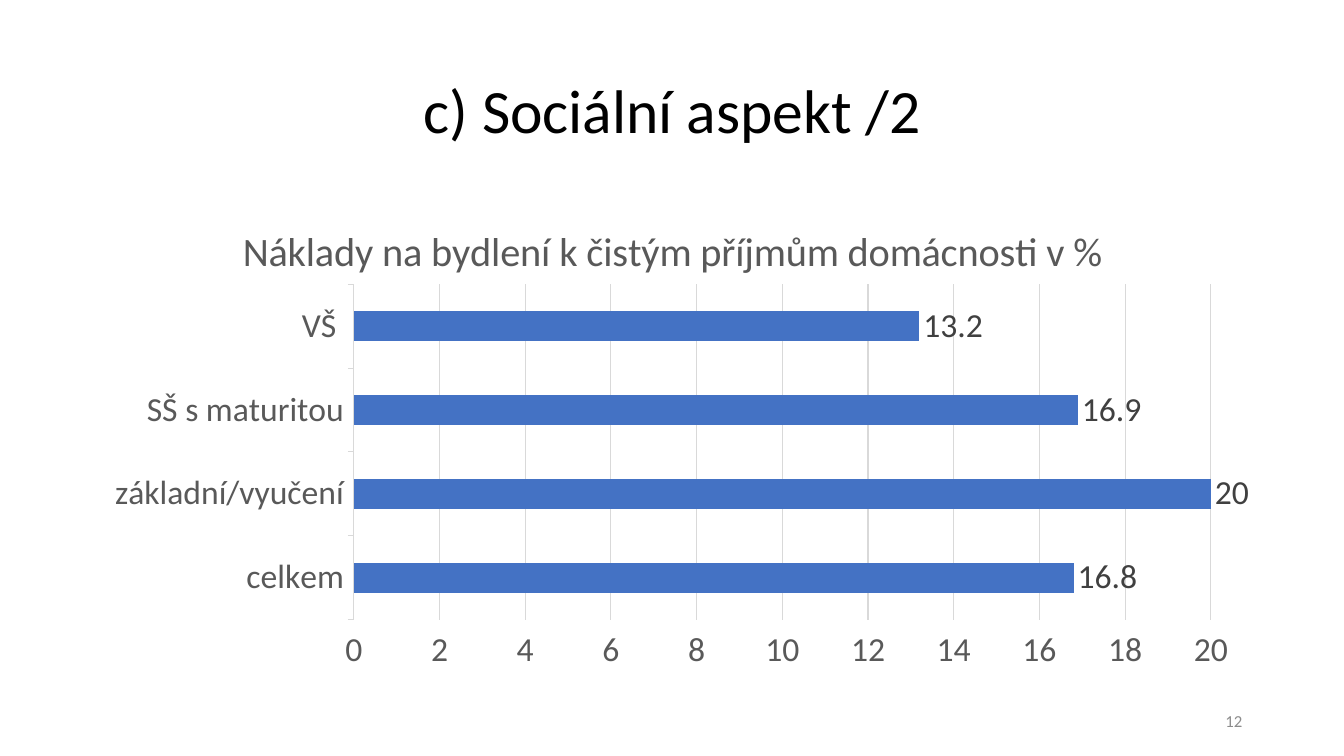
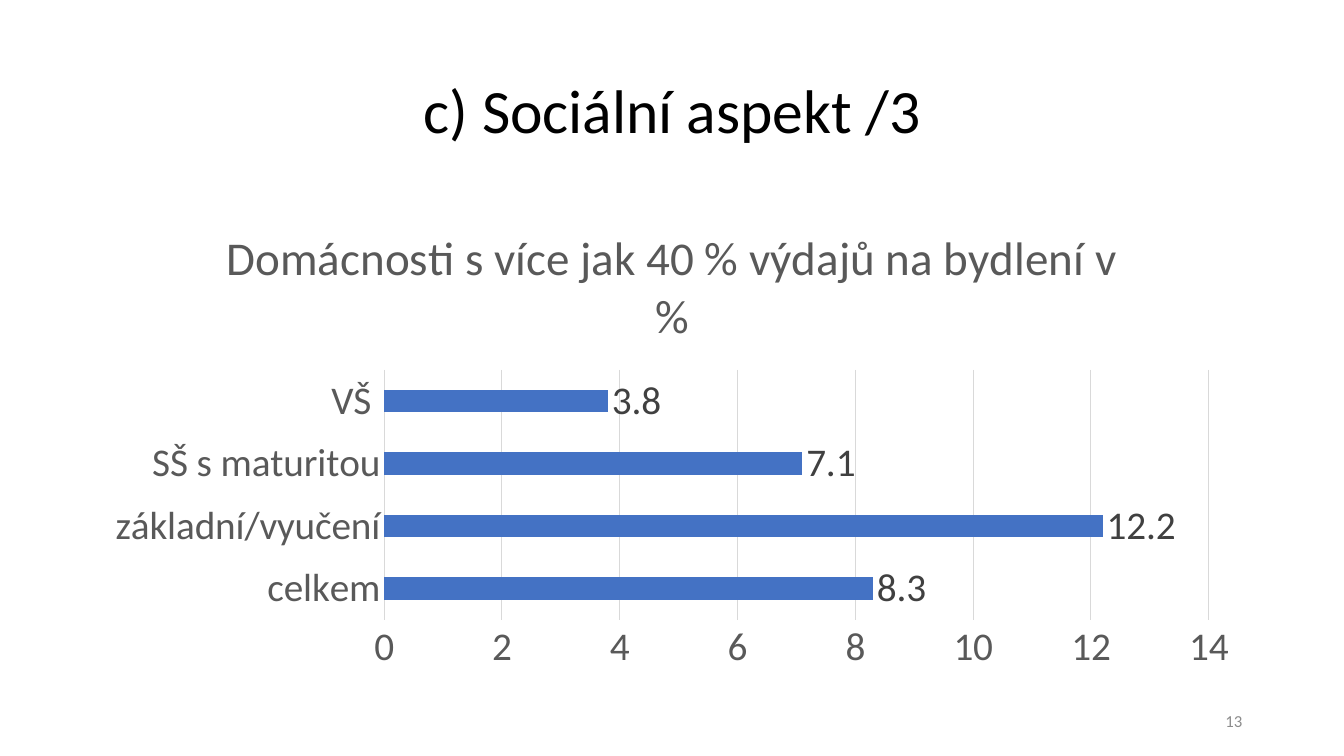
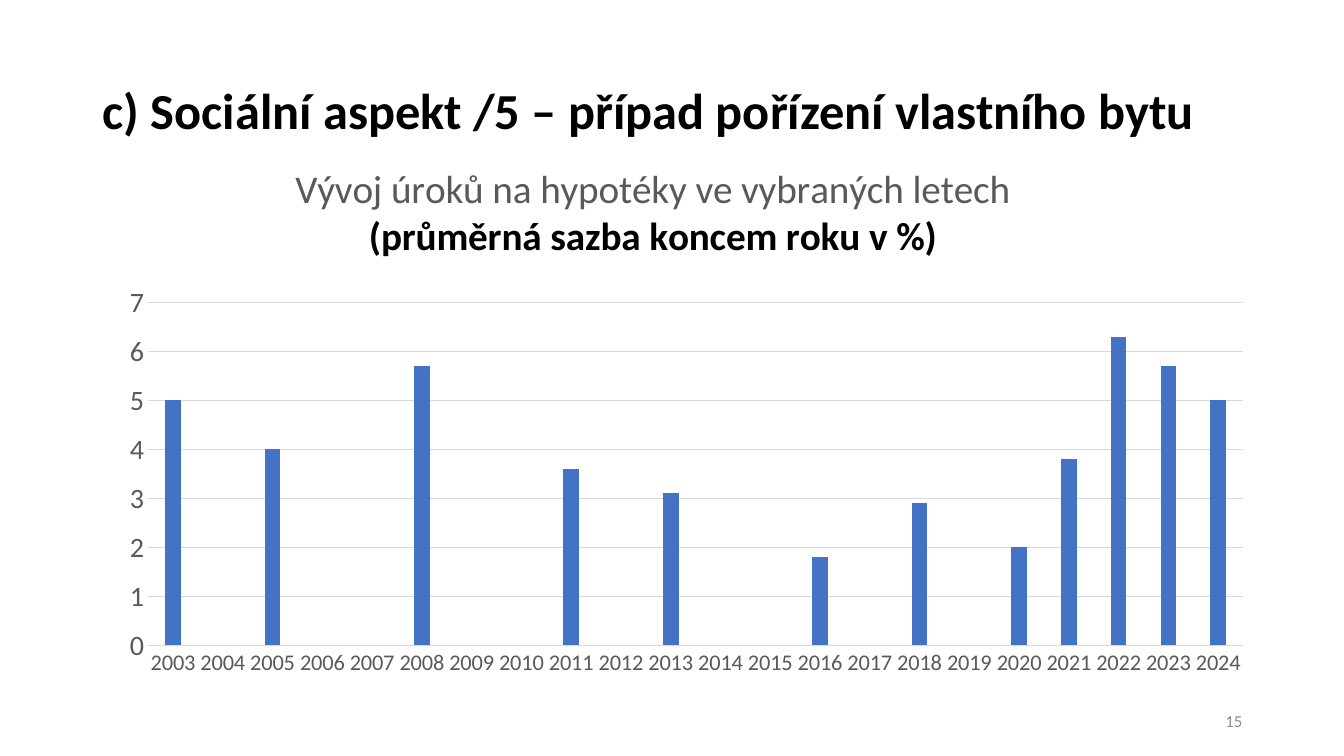
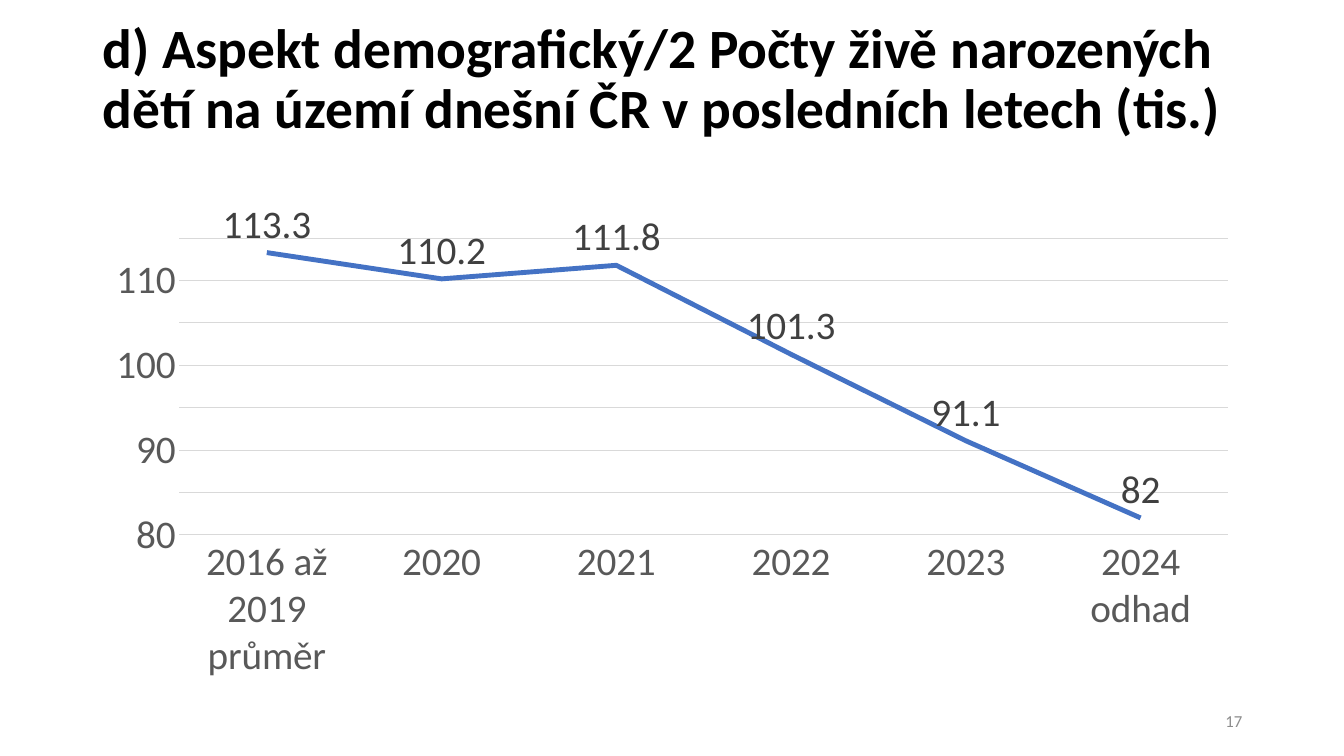
"""Builds four slides on the social and demographic aspects of housing."""
from dataclasses import dataclass

from lxml.etree import SubElement
from pptx import Presentation
from pptx.chart.data import CategoryChartData
from pptx.dml.color import RGBColor
from pptx.enum.chart import XL_CHART_TYPE as Kind
from pptx.enum.chart import XL_LABEL_POSITION as LabelSpot
from pptx.enum.chart import XL_MARKER_STYLE as Marker
from pptx.enum.chart import XL_TICK_MARK as Tick
from pptx.enum.text import MSO_ANCHOR as Anchor
from pptx.enum.text import MSO_AUTO_SIZE as AutoSize
from pptx.enum.text import PP_ALIGN as Align
from pptx.oxml.ns import qn
from pptx.util import Inches, Pt


@dataclass(frozen=True)
class Theme:
    font: str = "Calibri"
    ink: str = "000000"
    axis_text: str = "595959"
    label_text: str = "404040"
    rule: str = "D9D9D9"
    accent: str = "4472C4"
    number_text: str = "8C8C8C"
    heading_size: float = 44
    number_size: float = 12
    rule_width: float = 0.75
    trend_width: float = 3.5


TITLE_BOX = (0.92, 0.4, 11.5, 1.45)
NUMBER_BOX = (9.42, 6.95, 3, 0.4)
CHART_BOX = (0.92, 2, 11.5, 4.76)
EDUCATION = ("celkem", "základní/vyučení", "SŠ s maturitou", "VŠ ")


def set_font(font, **values):
    for name, value in values.items():
        if name == "color":
            font.color.rgb = RGBColor.from_string(value)
        else:
            setattr(font, name, value)


def set_layout(parent, index, **values):
    for old in parent.findall(qn("c:layout")):
        parent.remove(old)
    layout = parent.makeelement(qn("c:layout"))
    parent.insert(index, layout)
    manual = SubElement(layout, qn("c:manualLayout"))
    for name, value in values.items():
        SubElement(manual, qn(f"c:{name}")).set("val", str(value))


class Deck:
    def __init__(self, theme):
        self.theme = theme
        self.show = Presentation()
        self.show.slide_width, self.show.slide_height = Inches(13.33), Inches(7.5)
        self.slide = None

    def style(self, font, size, color, bold=False):
        set_font(font, name=self.theme.font, size=Pt(size), color=color, bold=bold)

    def text(self, shape, words, size, color, align, bold=False):
        frame = shape.text_frame
        settings = {"word_wrap": True, "auto_size": AutoSize.NONE,
                    "vertical_anchor": Anchor.MIDDLE}
        for name, value in settings.items():
            setattr(frame, name, value)
        frame.text = words
        paragraph = frame.paragraphs[0]
        paragraph.alignment = align
        self.style(paragraph.runs[0].font, size, color, bold)
        return frame

    def page(self, heading, number, size=None, bold=False, lift=0):
        self.slide = self.show.slides.add_slide(self.show.slide_layouts[5])
        title = self.slide.shapes.title
        title.left, title.top, title.width, title.height = map(Inches, TITLE_BOX)
        frame = self.text(title, heading, size or self.theme.heading_size, self.theme.ink,
                          Align.LEFT if bold else Align.CENTER, bold)
        frame.paragraphs[0].line_spacing = 0.9
        frame.margin_bottom = Inches(0.05 + lift)
        box = self.slide.shapes.add_textbox(*map(Inches, NUMBER_BOX))
        self.text(box, str(number), self.theme.number_size, self.theme.number_text, Align.RIGHT)

    def chart(self, kind, categories, values, plot, size, box=CHART_BOX):
        data = CategoryChartData()
        data.categories = categories
        data.add_series("Series 1", values)
        chart = self.slide.shapes.add_chart(kind, *map(Inches, box), data).chart
        chart.has_legend = chart.has_title = False
        self.style(chart.font, size, self.theme.ink)
        left, top, width, height = box
        set_layout(chart.plots[0]._element.getparent(), 0, layoutTarget="inner",
                   xMode="edge", yMode="edge",
                   x=(plot[0] - left) / width, y=(plot[1] - top) / height,
                   w=plot[2] / width, h=plot[3] / height)
        return chart

    def rule(self, line):
        line.color.rgb = RGBColor.from_string(self.theme.rule)
        line.width = Pt(self.theme.rule_width)

    def axes(self, chart, category_size, value_size, low, high, step, tick=Tick.NONE):
        for axis, size in ((chart.category_axis, category_size), (chart.value_axis, value_size)):
            axis.major_tick_mark, axis.minor_tick_mark = tick, Tick.NONE
            self.style(axis.tick_labels.font, size, self.theme.axis_text)
        self.rule(chart.category_axis.format.line)
        chart.category_axis.has_major_gridlines = False
        scale = {"minimum_scale": low, "maximum_scale": high, "major_unit": step,
                 "has_major_gridlines": True}
        for name, value in scale.items():
            setattr(chart.value_axis, name, value)
        self.rule(chart.value_axis.major_gridlines.format.line)
        chart.value_axis.format.line.fill.background()

    def caption(self, chart, lines, size, corner=None, box=CHART_BOX):
        frame = chart.chart_title.text_frame
        looks = ((self.theme.axis_text, False), (self.theme.ink, True))
        for index, (words, look) in enumerate(zip(lines, looks)):
            paragraph = frame.add_paragraph() if index else frame.paragraphs[0]
            run = paragraph.add_run()
            run.text = words
            self.style(run.font, size, *look)
        chart.chart_title.include_in_layout = False
        if corner:
            set_layout(chart.chart_title._element, 1, xMode="edge", yMode="edge",
                       x=(corner[0] - box[0]) / box[2], y=(corner[1] - box[1]) / box[3])

    def bars(self, chart, gap, overlap=0):
        plot = chart.plots[0]
        plot.gap_width, plot.overlap, plot.vary_by_categories = gap, overlap, False
        fill = plot.series[0].format.fill
        fill.solid()
        fill.fore_color.rgb = RGBColor.from_string(self.theme.accent)

    def trend(self, chart):
        plot = chart.plots[0]
        plot.vary_by_categories = False
        series = plot.series[0]
        series.smooth = False
        series.marker.style = Marker.NONE
        series.format.line.color.rgb = RGBColor.from_string(self.theme.accent)
        series.format.line.width = Pt(self.theme.trend_width)

    def labels(self, chart, size, position):
        labels = chart.plots[0].series[0].data_labels
        labels.show_value, labels.position = True, position
        self.style(labels.font, size, self.theme.label_text)

    def education(self, values, caption, size, plot, high, tick):
        chart = self.chart(Kind.BAR_CLUSTERED, EDUCATION, values, plot, size)
        self.axes(chart, size, size, 0, high, 2, tick)
        self.caption(chart, [caption], size * 1.2)
        self.bars(chart, 182)
        self.labels(chart, size, LabelSpot.OUTSIDE_END)


def main():
    deck = Deck(Theme())

    deck.page("c) Sociální aspekt /2", 12)
    deck.education((16.8, 20, 16.9, 13.2), "Náklady na bydlení k čistým příjmům domácnosti v %",
                   24, (3.51, 2.82, 8.5, 3.33), 20, Tick.OUTSIDE)

    deck.page("c) Sociální aspekt /3", 13)
    deck.education((8.3, 12.2, 7.1, 3.8), "Domácnosti s více jak 40 % výdajů na bydlení v %",
                   28, (3.81, 3.67, 8.18, 2.48), 14, Tick.NONE)

    deck.page("c) Sociální aspekt /5 – případ pořízení vlastního bytu", 15, 36, True)
    rates = {2003: 5, 2005: 4, 2008: 5.7, 2011: 3.6, 2013: 3.1, 2016: 1.8, 2018: 2.9,
             2020: 2, 2021: 3.8, 2022: 6.3, 2023: 5.7, 2024: 5}
    years = range(2003, 2025)
    rates_box = (1.06, 1.52, 11.5, 5.29)
    mortgages = deck.chart(Kind.COLUMN_CLUSTERED, [str(year) for year in years],
                           [rates.get(year) for year in years],
                           (1.47, 3, 10.86, 3.4), 10, rates_box)
    deck.axes(mortgages, 16, 20, 0, 7, 1)
    deck.caption(mortgages, ["Vývoj úroků na hypotéky ve vybraných letech",
                             "(průměrná sazba koncem roku v %)"], 28, (2.9, 1.6), rates_box)
    deck.bars(mortgages, 219, -27)

    deck.page("d) Aspekt demografický/2 Počty živě narozených dětí na území dnešní ČR "
              "v posledních letech (tis.)", 17, 39.6, True, lift=0.66)
    births = deck.chart(Kind.LINE, ("2016 až 2019 průměr", "2020", "2021", "2022", "2023",
                                    "2024 odhad"),
                        (113.3, 110.2, 111.8, 101.3, 91.1, 82), (1.78, 2.34, 10.4, 2.96), 28)
    deck.axes(births, 28, 28, 80, 115, 5)
    deck.trend(births)
    deck.labels(births, 28, LabelSpot.ABOVE)

    deck.show.save("out.pptx")


if __name__ == "__main__":
    main()
